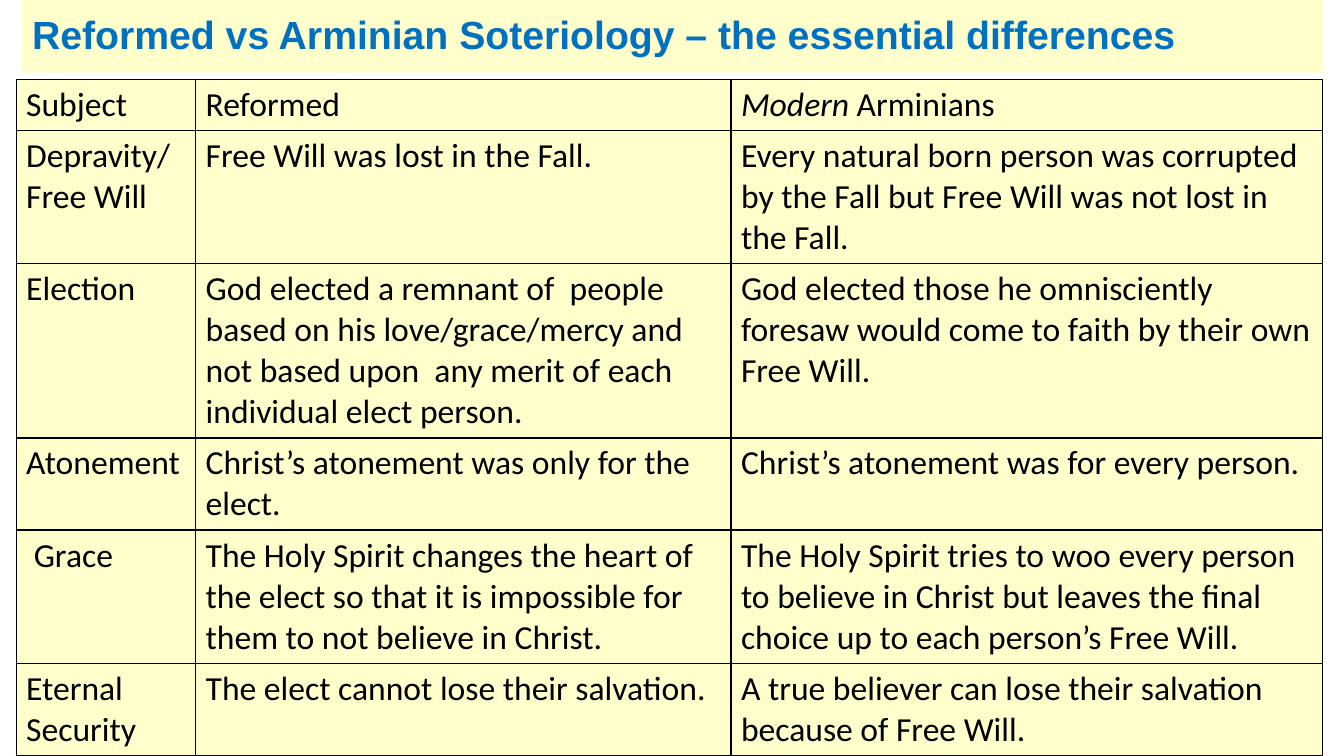
from lxml import etree
from pptx import Presentation
from pptx.dml.color import RGBColor
from pptx.enum import shapes, text
from pptx.oxml.ns import qn
from pptx.util import Inches, Pt

CREAM, BLUE, BLACK = "FFFFCC", "0070C0", "000000"


def paint(fill, tint):
    fill.solid()
    fill.fore_color.rgb = RGBColor.from_string(tint)


def edge(cell):
    props = cell._tc.get_or_add_tcPr()
    for i, side in enumerate(("lnL", "lnR", "lnT", "lnB")):
        line = etree.Element(qn("a:" + side), w=str(Pt(1)))
        solid = etree.SubElement(line, qn("a:solidFill"))
        etree.SubElement(solid, qn("a:srgbClr"), val=BLACK)
        props.insert(i, line)


deck = Presentation()
deck.slide_width, deck.slide_height = Inches(13.33), Inches(7.5)
slide = deck.slides.add_slide(deck.slide_layouts[6])

# Title band
band = slide.shapes.add_shape(shapes.MSO_SHAPE.RECTANGLE, Inches(0.22), 0,
                              Inches(12.9), Inches(0.72))
band.shadow.inherit = False
paint(band.fill, CREAM)
band.line.fill.background()
frame = band.text_frame
frame.word_wrap = True
frame.vertical_anchor = text.MSO_ANCHOR.MIDDLE
head = frame.paragraphs[0]
head.text = "Reformed vs Arminian Soteriology – the essential differences"
head.alignment = text.PP_ALIGN.LEFT
head.line_spacing = 0.9
head.font.name, head.font.size, head.font.bold = "Arial", Pt(28), True
paint(head.font.fill, BLUE)

# Comparison: subject, Reformed view, Arminian view
rows = [
    ("Subject", "Reformed", "Modern Arminians"),
    ("Depravity/\nFree Will", "Free Will was lost in the Fall.",
     "Every natural born person was corrupted by the Fall "
     "but Free Will was not lost in the Fall."),
    ("Election",
     "God elected a remnant of  people based on his love/grace/mercy "
     "and not based upon  any merit of each individual elect person.",
     "God elected those he omnisciently  foresaw would come to faith "
     "by their own Free Will."),
    ("Atonement", "Christ’s atonement was only for the elect.",
     "Christ’s atonement was for every person."),
    (" Grace",
     "The Holy Spirit changes the heart of the elect so that it is "
     "impossible for them to not believe in Christ.",
     "The Holy Spirit tries to woo every person to believe in Christ "
     "but leaves the final choice up to each person’s Free Will."),
    ("Eternal\nSecurity", "The elect cannot lose their salvation.",
     "A true believer can lose their salvation because of Free Will."),
]
wide = (1.78, 5.31, 5.87)
high = 0.41  # least height; rows grow with their text
grid = slide.shapes.add_table(len(rows), len(wide), Inches(0.16), Inches(0.79),
                              Inches(sum(wide)), Inches(high * len(rows))).table
for col, width in zip(grid.columns, wide):
    col.width = Inches(width)
for r, row in enumerate(rows):
    grid.rows[r].height = Inches(high)
    for c, words in enumerate(row):
        cell = grid.cell(r, c)
        cell.text = words
        paint(cell.fill, CREAM)
        edge(cell)
        for para in cell.text_frame.paragraphs:
            font = para.font
            font.name, font.size, font.bold = "Calibri", Pt(24), False
            paint(font.fill, BLACK)

# Italic first word in the last heading
para = grid.cell(0, 2).text_frame.paragraphs[0]
para.runs[0].text = "Modern "
para.runs[0].font.italic = True
para.add_run().text = "Arminians"

deck.save("out.pptx")
